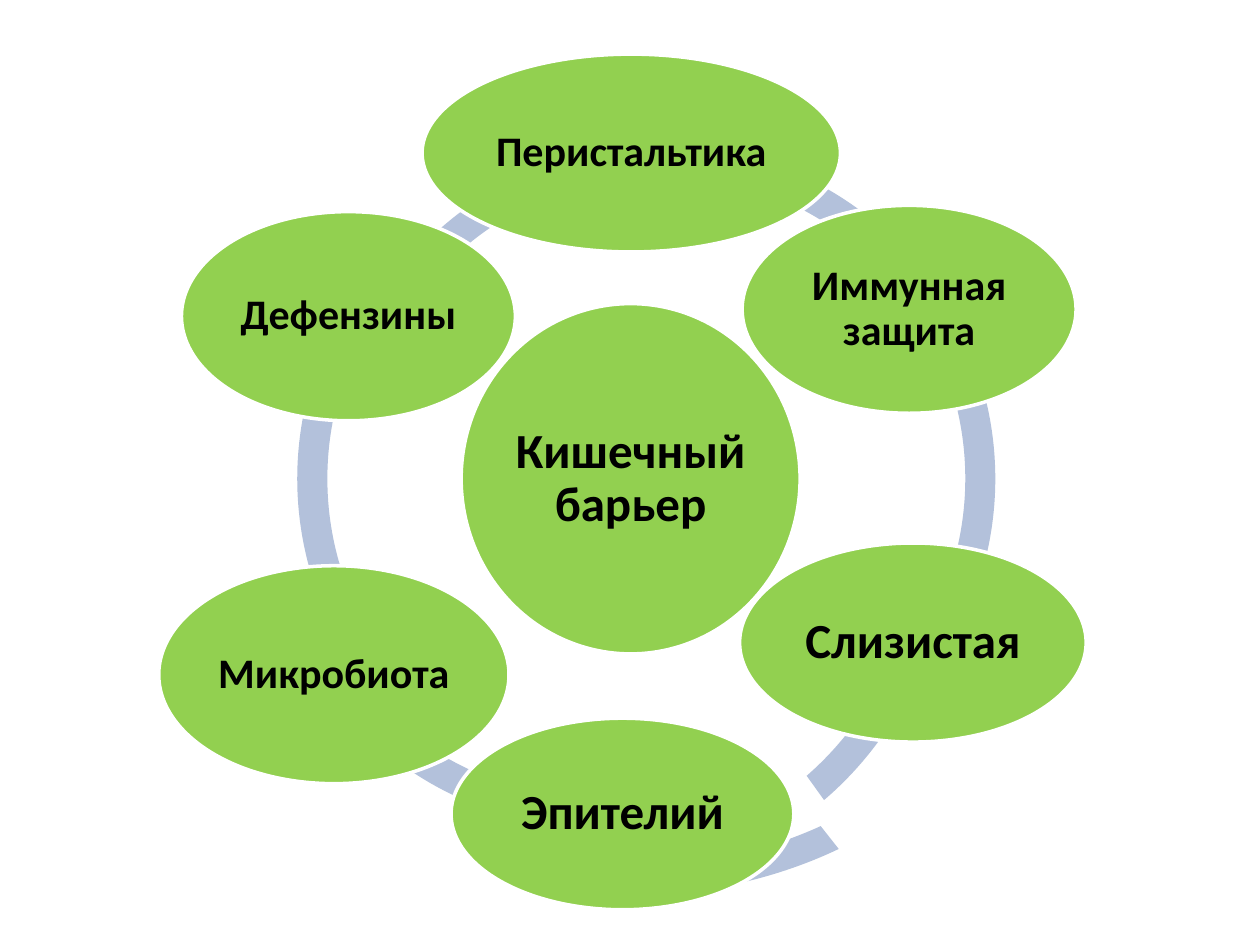
from pptx import Presentation
from pptx.dml.color import RGBColor
from pptx.enum.shapes import MSO_SHAPE
from pptx.enum.text import MSO_ANCHOR, PP_ALIGN
from pptx.util import Inches, Pt

ARC = MSO_SHAPE.BLOCK_ARC
OVAL = MSO_SHAPE.OVAL
MIDDLE = MSO_ANCHOR.MIDDLE
CENTER = PP_ALIGN.CENTER

GREEN = RGBColor(0x92, 0xD0, 0x50)
BLUE = RGBColor(0xB3, 0xC1, 0xDB)
WHITE = RGBColor(0xFF, 0xFF, 0xFF)
BLACK = RGBColor(0x00, 0x00, 0x00)

WIDTH, HEIGHT = Inches(10), Inches(7.5)
COLS, ROWS = 100, 75
THICK = 0.045  # ring width as a share of its size
TURN = 0.6     # one degree in adjustment units

# Grid box, start angle, end angle
ARCS = [
    ((23.6, 11.5, 53, 53), 126, 162),
    ((20.9, 12.7, 53, 53), 89.4, 129.43),
    ((17.3, 20.8, 64.7, 50.3), 51.71, 87.06),
    ((22.9, 12.2, 52.6, 57.4), 17.03, 54.36),
    ((26, 11.5, 53, 53), 197.16, 18.04),
    ((23.6, 11.5, 53, 53), 161.96, 197.12),
]

# Grid box, label, text size
NODES = [
    ((36.6, 24.1, 26.9, 27.8), "Кишечный барьер", 28),
    ((33.5, 4.3, 33.2, 15.7), "Перистальтика", 24),
    ((58.9, 16.3, 26.5, 16.5), "Иммунная защита", 24),
    ((58.7, 43.1, 27.5, 15.8), "Слизистая", 28),
    ((35.8, 57, 27.2, 15.2), "Эпителий", 28),
    ((12.6, 44.9, 27.8, 17.3), "Микробиота", 24),
    ((14.4, 16.8, 26.5, 16.6), "Дефензины", 24),
]


def add_form(slide, kind, box, fill):
    """Add a flat filled shape on a box of grid columns and rows."""
    x, y, w, h = box
    form = slide.shapes.add_shape(
        kind, int(WIDTH * x / COLS), int(HEIGHT * y / ROWS),
        int(WIDTH * w / COLS), int(HEIGHT * h / ROWS))
    form.shadow.inherit = False
    form.fill.solid()
    form.fill.fore_color.rgb = fill
    return form


def add_arc(slide, box, start, end):
    arc = add_form(slide, ARC, box, BLUE)
    arc.line.fill.background()
    for i, value in enumerate((start * TURN, end * TURN, THICK)):
        arc.adjustments[i] = value


def add_node(slide, box, label, size):
    node = add_form(slide, OVAL, box, GREEN)
    node.line.color.rgb = WHITE
    node.line.width = Pt(2)
    frame = node.text_frame
    frame.word_wrap = True
    frame.vertical_anchor = MIDDLE
    inset = Pt(size / 10)
    frame.margin_left = frame.margin_right = inset
    frame.margin_top = frame.margin_bottom = inset
    para = frame.paragraphs[0]
    para.alignment = CENTER
    para.line_spacing = 0.9
    run = para.add_run()
    run.text = label
    font = run.font
    font.name = "Calibri"
    font.size = Pt(size)
    font.bold = True
    font.color.rgb = BLACK


def main():
    deck = Presentation()
    deck.slide_width, deck.slide_height = WIDTH, HEIGHT
    slide = deck.slides.add_slide(deck.slide_layouts[6])
    for arc in ARCS:
        add_arc(slide, *arc)
    for node in NODES:
        add_node(slide, *node)
    deck.save("out.pptx")


if __name__ == "__main__":
    main()
